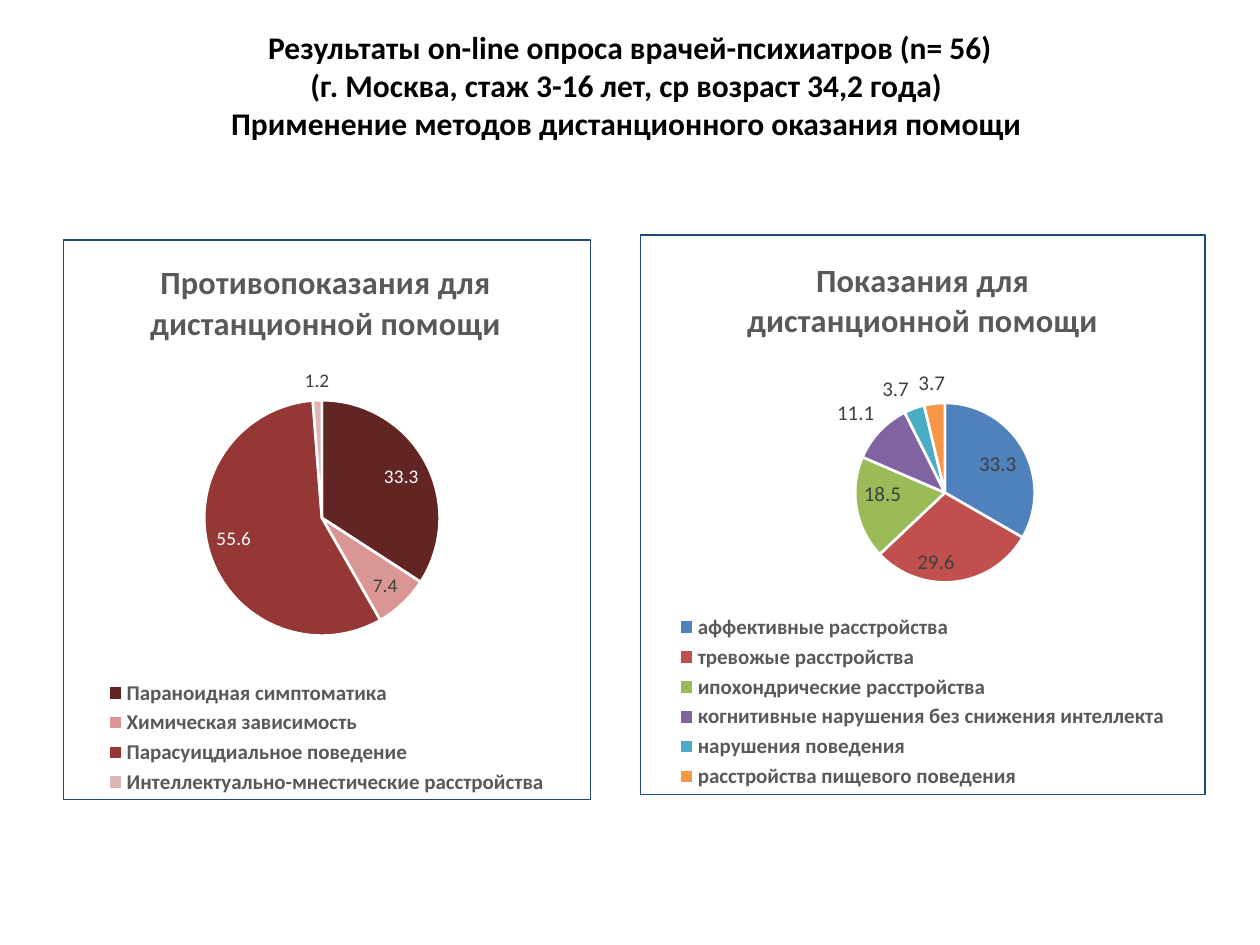
from dataclasses import dataclass
from typing import Any

from pptx import Presentation
from pptx.chart.data import CategoryChartData
from pptx.dml.color import RGBColor
from pptx.enum.chart import XL_CHART_TYPE, XL_LABEL_POSITION, XL_LEGEND_POSITION
from pptx.enum.text import MSO_ANCHOR, PP_ALIGN
from pptx.oxml import parse_xml
from pptx.oxml.ns import nsdecls, qn
from pptx.util import Inches, Pt

PIE = XL_CHART_TYPE.PIE
INSIDE = XL_LABEL_POSITION.INSIDE_END
OUTSIDE = XL_LABEL_POSITION.OUTSIDE_END
BOTTOM = XL_LEGEND_POSITION.BOTTOM
MIDDLE = MSO_ANCHOR.MIDDLE
CENTER = PP_ALIGN.CENTER

WIDTH, HEIGHT = Inches(10), Inches(7.5)
FONT = "Calibri"
COLORS = {
    "black": "000000", "white": "FFFFFF", "gray": "595959", "label": "404040",
    "border": "1F497D", "maroon": "632523", "rose": "D99694", "brick": "953735",
    "pink": "DDB6B5", "blue": "4F81BD", "red": "C0504D", "green": "9BBB59",
    "purple": "8064A2", "teal": "4BACC6", "orange": "F79646",
}
HEADING = (
    "Результаты on-line опроса врачей-психиатров (n= 56)\n"
    "(г. Москва, стаж 3-16 лет, ср возраст 34,2 года) \n"
    "Применение методов дистанционного оказания помощи "
)


@dataclass(frozen=True)
class Area:
    left: float
    top: float
    width: float = 0
    height: float = 0


@dataclass(frozen=True)
class Slice:
    name: str
    value: float
    color: str
    label_color: str = "label"
    label_place: Any = INSIDE
    label_shift: float = 0


@dataclass(frozen=True)
class PiePanel:
    title: str
    series: str
    area: Area
    title_area: Area
    pie_area: Area
    legend_area: Area
    label_size: int
    slices: tuple[Slice, ...]


PANELS = (
    PiePanel(
        "Противопоказания для дистанционной помощи", "Series 1",
        Area(0.05, 0.2533, 0.419, 0.5933), Area(0.153, 0.024),
        Area(0.267, 0.286, 0.447, 0.422), Area(0.064, 0.779, 0.87, 0.221), 11,
        (
            Slice("Параноидная симптоматика", 33.3, "maroon", "white"),
            Slice("Химическая зависимость", 7.4, "rose"),
            Slice("Парасуицдиальное поведение", 55.6, "brick", "white"),
            Slice("Интеллектуально-мнестические расстройства", 1.2, "pink",
                  label_place=OUTSIDE),
        ),
    ),
    PiePanel(
        "Показания для дистанционной помощи", "Показания для дистанционной помощи",
        Area(0.508, 0.248, 0.449, 0.5933), Area(0.178, 0.029),
        Area(0.38, 0.3, 0.318, 0.322), Area(0.044, 0.67, 0.91, 0.33), 12,
        (
            Slice("аффективные расстройства", 33.3, "blue"),
            Slice("тревожые расстройства ", 29.6, "red"),
            Slice("ипохондрические расстройства", 18.5, "green"),
            Slice("когнитивные нарушения без снижения интеллекта", 11.1, "purple",
                  label_place=OUTSIDE),
            Slice("нарушения поведения", 3.7, "teal", label_place=OUTSIDE,
                  label_shift=-0.005),
            Slice("расстройства пищевого поведения", 3.7, "orange",
                  label_place=OUTSIDE, label_shift=0.02),
        ),
    ),
)


def rgb(name: str) -> RGBColor:
    return RGBColor.from_string(COLORS[name])


def format_font(font: Any, size: float, color: str, bold: bool = False) -> None:
    for key, value in {"name": FONT, "size": Pt(size), "bold": bold}.items():
        setattr(font, key, value)
    font.color.rgb = rgb(color)


def frame(area: Area) -> dict[str, int]:
    return {
        "left": int(area.left * WIDTH), "top": int(area.top * HEIGHT),
        "width": int(area.width * WIDTH), "height": int(area.height * HEIGHT),
    }


def insert_layout(part: Any, index: int, settings: str) -> None:
    for layout in part.findall(qn("c:layout")):
        part.remove(layout)
    part.insert(index, parse_xml(
        f'<c:layout {nsdecls("c")}><c:manualLayout>{settings}'
        '</c:manualLayout></c:layout>'
    ))


def place_part(part: Any, area: Area, index: int, inner: bool = False) -> None:
    target = '<c:layoutTarget val="inner"/>' if inner else ""
    size = f'<c:w val="{area.width}"/><c:h val="{area.height}"/>' if area.width else ""
    insert_layout(part, index, (
        f'{target}<c:xMode val="edge"/><c:yMode val="edge"/>'
        f'<c:x val="{area.left}"/><c:y val="{area.top}"/>{size}'
    ))


def add_border(chart: Any) -> None:
    chart.element.find(qn("c:chart")).addnext(parse_xml(
        f'<c:spPr {nsdecls("c", "a")}><a:noFill/><a:ln w="{Pt(0.75)}"><a:solidFill>'
        f'<a:srgbClr val="{COLORS["border"]}"/></a:solidFill></a:ln></c:spPr>'
    ))


def format_slice(point: Any, part: Slice, label_size: int) -> None:
    point.format.fill.solid()
    point.format.fill.fore_color.rgb = rgb(part.color)
    point.format.line.color.rgb = rgb("white")
    point.format.line.width = Pt(1.5)
    format_font(point.data_label.font, label_size, part.label_color)
    point.data_label.position = part.label_place


def shift_labels(series: Any, slices: tuple[Slice, ...]) -> None:
    for leader in series._element.iter(qn("c:showLeaderLines")):
        leader.set("val", "0")
    for label, part in zip(series._element.iter(qn("c:dLbl")), slices):
        if part.label_shift:
            insert_layout(label, 1, f'<c:x val="{part.label_shift}"/><c:y val="0"/>')


def add_pie(page: Any, panel: PiePanel) -> None:
    data = CategoryChartData()
    data.categories = [part.name for part in panel.slices]
    data.add_series(panel.series, [part.value for part in panel.slices])
    box = frame(panel.area)
    chart = page.shapes.add_chart(
        PIE, box["left"], box["top"], box["width"], box["height"], data
    ).chart
    format_font(chart.font, 10, "black")
    add_border(chart)

    para = chart.chart_title.text_frame.paragraphs[0]
    span = para.add_run()
    span.text = panel.title
    format_font(span.font, 18.5, "gray", True)
    place_part(chart.chart_title._element, panel.title_area, 1)

    chart.has_legend = True
    chart.legend.position = BOTTOM
    chart.legend.include_in_layout = False
    format_font(chart.legend.font, 12, "gray", True)
    place_part(chart.legend._element, panel.legend_area, 1)

    plot = chart.plots[0]
    plot.vary_by_categories = True
    place_part(plot._element.getparent(), panel.pie_area, 0, inner=True)
    series = plot.series[0]
    for index, part in enumerate(panel.slices):
        format_slice(series.points[index], part, panel.label_size)
    shift_labels(series, panel.slices)


def add_heading(page: Any) -> None:
    title = page.shapes.title
    for key, value in frame(Area(0.05, 0.0067, 0.9, 0.1667)).items():
        setattr(title, key, value)
    title.text_frame.vertical_anchor = MIDDLE
    para = title.text_frame.paragraphs[0]
    para.text = HEADING
    para.alignment = CENTER
    for span in para.runs:
        format_font(span.font, 18, "black", True)


def main() -> None:
    deck = Presentation()
    deck.slide_width, deck.slide_height = WIDTH, HEIGHT
    page = deck.slides.add_slide(deck.slide_layouts.get_by_name("Title Only"))
    add_heading(page)
    for panel in PANELS:
        add_pie(page, panel)
    deck.save("out.pptx")


if __name__ == "__main__":
    main()
